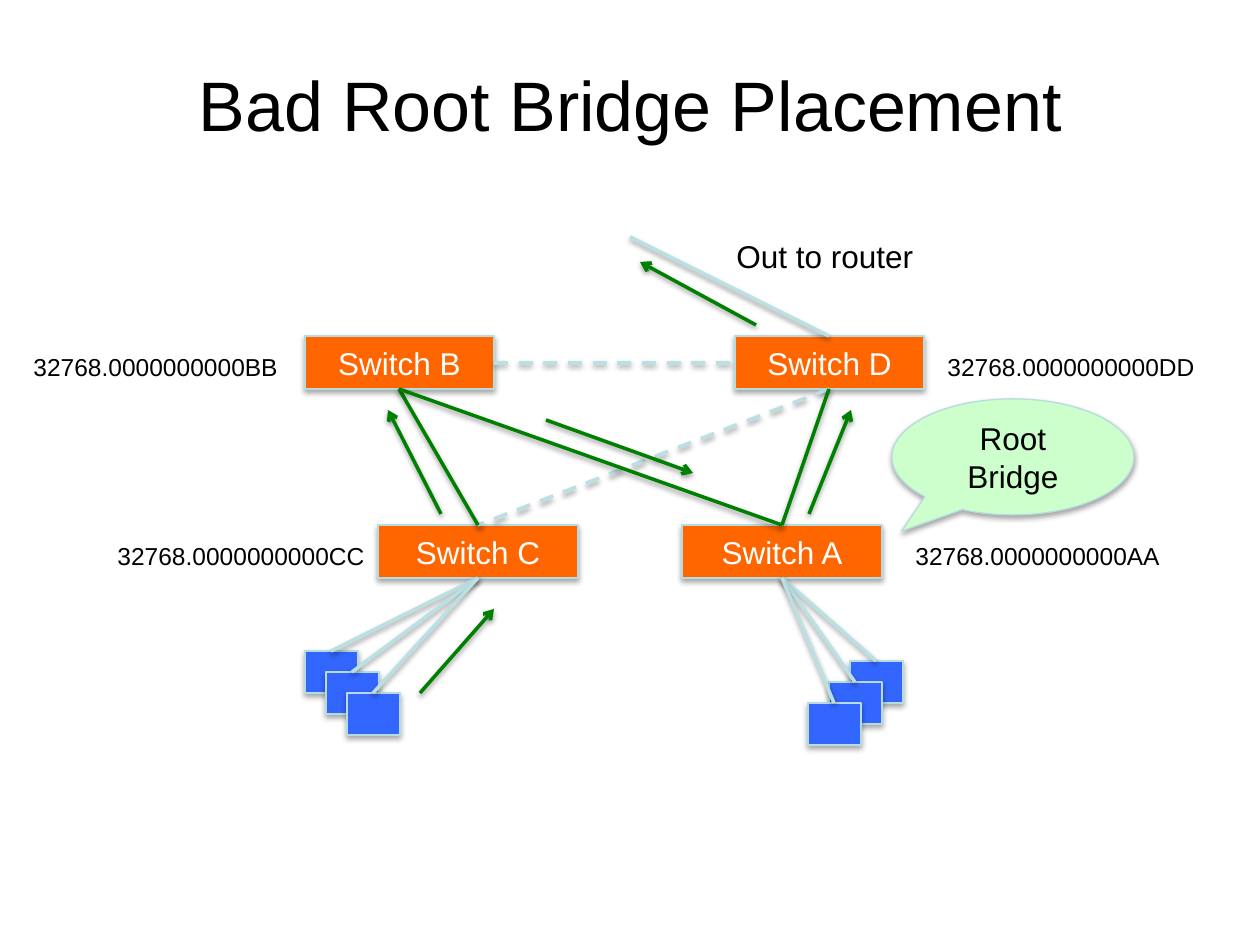
from lxml import etree
from pptx import Presentation
from pptx.dml.color import RGBColor
from pptx.enum.dml import MSO_LINE
from pptx.enum.shapes import MSO_CONNECTOR, MSO_SHAPE
from pptx.enum.text import MSO_ANCHOR, MSO_AUTO_SIZE, PP_ALIGN
from pptx.oxml import parse_xml
from pptx.oxml.ns import nsdecls, qn
from pptx.util import Pt

EMU_PER_PX = 914400 / 126
BLACK, WHITE = "000000", "FFFFFF"
ORANGE, BLUE, MINT = "FF6600", "3366FF", "CCFFCC"
EDGE, LINK, GREEN = "B6DCDF", "BBE0E3", "008000"
SWITCH_HEIGHT = 53
HOST_WIDTH, HOST_HEIGHT, HOST_STEP = 53, 42, 21


def px(value):
    return round(value * EMU_PER_PX)


def color(value):
    return RGBColor.from_string(value)


def shadow_effect(distance, opacity):
    return parse_xml(
        f'<a:outerShdw {nsdecls("a")} blurRad="40000" dist="{distance}" dir="5400000" rotWithShape="0">'
        f'<a:srgbClr val="{BLACK}"><a:alpha val="{opacity * 1000}"/></a:srgbClr></a:outerShdw>'
    )


class Diagram:
    font = "Arial"

    def __init__(self, slide):
        self.slide = slide

    def set_text(self, shape, text, size, text_color, align):
        paragraph = shape.text_frame.paragraphs[0]
        paragraph.text = text
        paragraph.alignment = align
        paragraph.font.name = self.font
        paragraph.font.size = Pt(size)
        paragraph.font.color.rgb = color(text_color)

    def textbox(self, box):
        return self.slide.shapes.add_textbox(*map(px, box))

    def title(self, text, box):
        shape = self.textbox(box)
        shape.text_frame.word_wrap = True
        shape.text_frame.vertical_anchor = MSO_ANCHOR.MIDDLE
        self.set_text(shape, text, 40, BLACK, PP_ALIGN.CENTER)

    def label(self, text, box, size):
        shape = self.textbox(box)
        shape.text_frame.word_wrap = False
        shape.text_frame.auto_size = MSO_AUTO_SIZE.SHAPE_TO_FIT_TEXT
        self.set_text(shape, text, size, BLACK, PP_ALIGN.LEFT)

    def block(self, box, fill, text="", text_color=WHITE, kind=MSO_SHAPE.RECTANGLE):
        shape = self.slide.shapes.add_shape(kind, *map(px, box))
        shape.fill.solid()
        shape.fill.fore_color.rgb = color(fill)
        shape.line.color.rgb = color(EDGE)
        shape.line.width = Pt(0.75)
        shape.shadow.inherit = False
        effects = shape._element.spPr.find(qn("a:effectLst"))
        effects.append(shadow_effect(23000, 35))
        if text:
            shape.text_frame.word_wrap = True
            shape.text_frame.vertical_anchor = MSO_ANCHOR.MIDDLE
            self.set_text(shape, text, 18, text_color, PP_ALIGN.CENTER)
        return shape

    def line(self, start, end, line_color=LINK, dashed=False, arrow=False):
        connector = self.slide.shapes.add_connector(
            MSO_CONNECTOR.STRAIGHT, *map(px, (*start, *end)))
        connector.line.color.rgb = color(line_color)
        connector.line.width = Pt(2)
        if dashed:
            connector.line.dash_style = MSO_LINE.DASH
        properties = connector._element.spPr
        if arrow:
            outline = properties.find(qn("a:ln"))
            etree.SubElement(outline, qn("a:tailEnd"), type="arrow")
        effects = etree.SubElement(properties, qn("a:effectLst"))
        effects.append(shadow_effect(20000, 38))

    def hosts(self, left, top, direction, uplink):
        corners = [(left + direction * HOST_STEP * i, top + HOST_STEP * i) for i in range(3)]
        for corner in corners:
            self.block((*corner, HOST_WIDTH, HOST_HEIGHT), BLUE)
        for x, y in corners:
            self.line(uplink, (x + HOST_WIDTH // 2, y))


def main():
    presentation = Presentation()
    presentation.slide_width, presentation.slide_height = px(1260), px(945)
    slide = presentation.slides.add_slide(presentation.slide_layouts[6])
    diagram = Diagram(slide)
    diagram.title("Bad Root Bridge Placement", (63, 38, 1134, 130))

    switches = {
        "D": (735, 336, 189),
        "C": (378, 525, 200),
        "B": (305, 336, 189),
        "A": (682, 525, 200),
    }
    top, bottom = {}, {}
    for name, (x, y, width) in switches.items():
        diagram.block((x, y, width, SWITCH_HEIGHT), ORANGE, f"Switch {name}")
        top[name] = (x + width // 2, y)
        bottom[name] = (x + width // 2, y + SWITCH_HEIGHT)

    diagram.line((494, 363), (735, 363), dashed=True)
    diagram.line(bottom["D"], top["C"], dashed=True)
    for upper, lower in ("BC", "DA", "BA"):
        diagram.line(bottom[upper], top[lower], GREEN)
    diagram.line((630, 237), top["D"])

    for name, x, y in (("B", 21, 346), ("D", 935, 346), ("C", 105, 535), ("A", 903, 535)):
        diagram.label(f"32768.0000000000{name * 2}", (x, y, 273, 43), 14)
    diagram.label("Out to router", (724, 231, 204, 50), 18)

    callout = diagram.block((892, 399, 242, 116), MINT, "Root Bridge", BLACK,
                            MSO_SHAPE.OVAL_CALLOUT)
    callout.adjustments[0] = -0.46
    callout.adjustments[1] = 0.64

    diagram.hosts(305, 651, 1, bottom["C"])
    diagram.hosts(850, 661, -1, bottom["A"])

    traffic = (
        ((420, 693), (494, 609)),
        ((441, 514), (388, 410)),
        ((546, 420), (693, 473)),
        ((809, 514), (851, 410)),
        ((756, 325), (640, 262)),
    )
    for start, end in traffic:
        diagram.line(start, end, GREEN, arrow=True)

    presentation.save("out.pptx")


if __name__ == "__main__":
    main()
